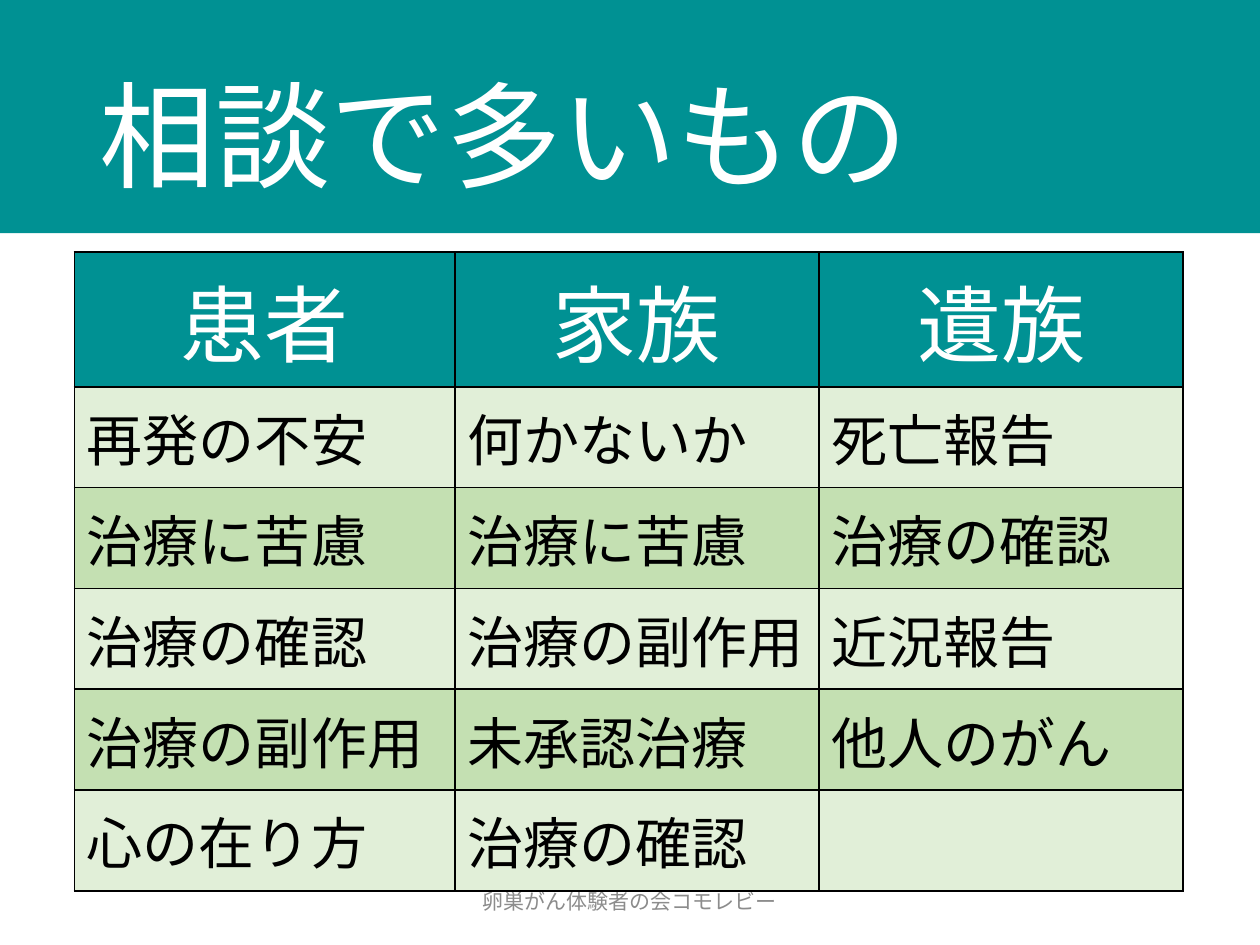
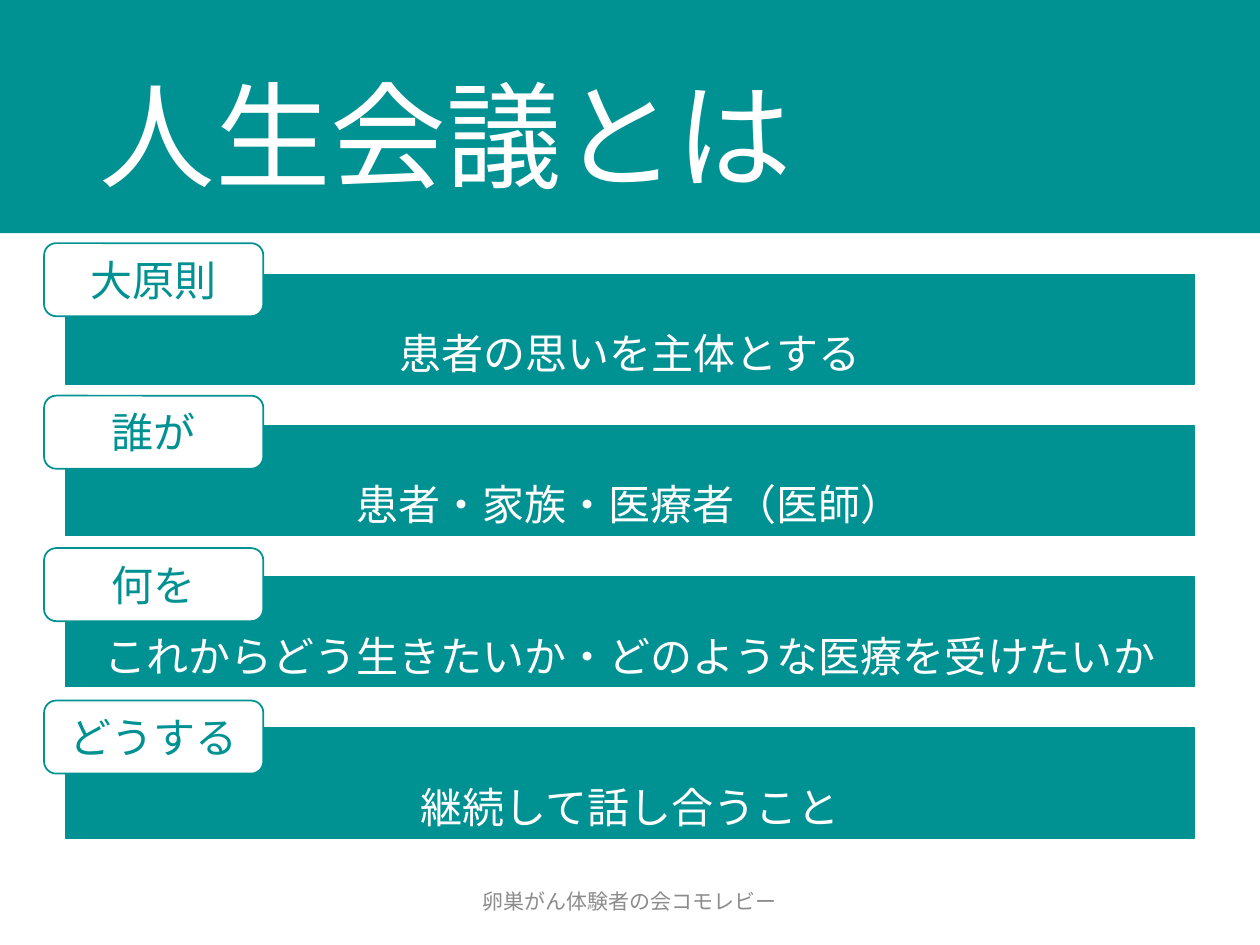
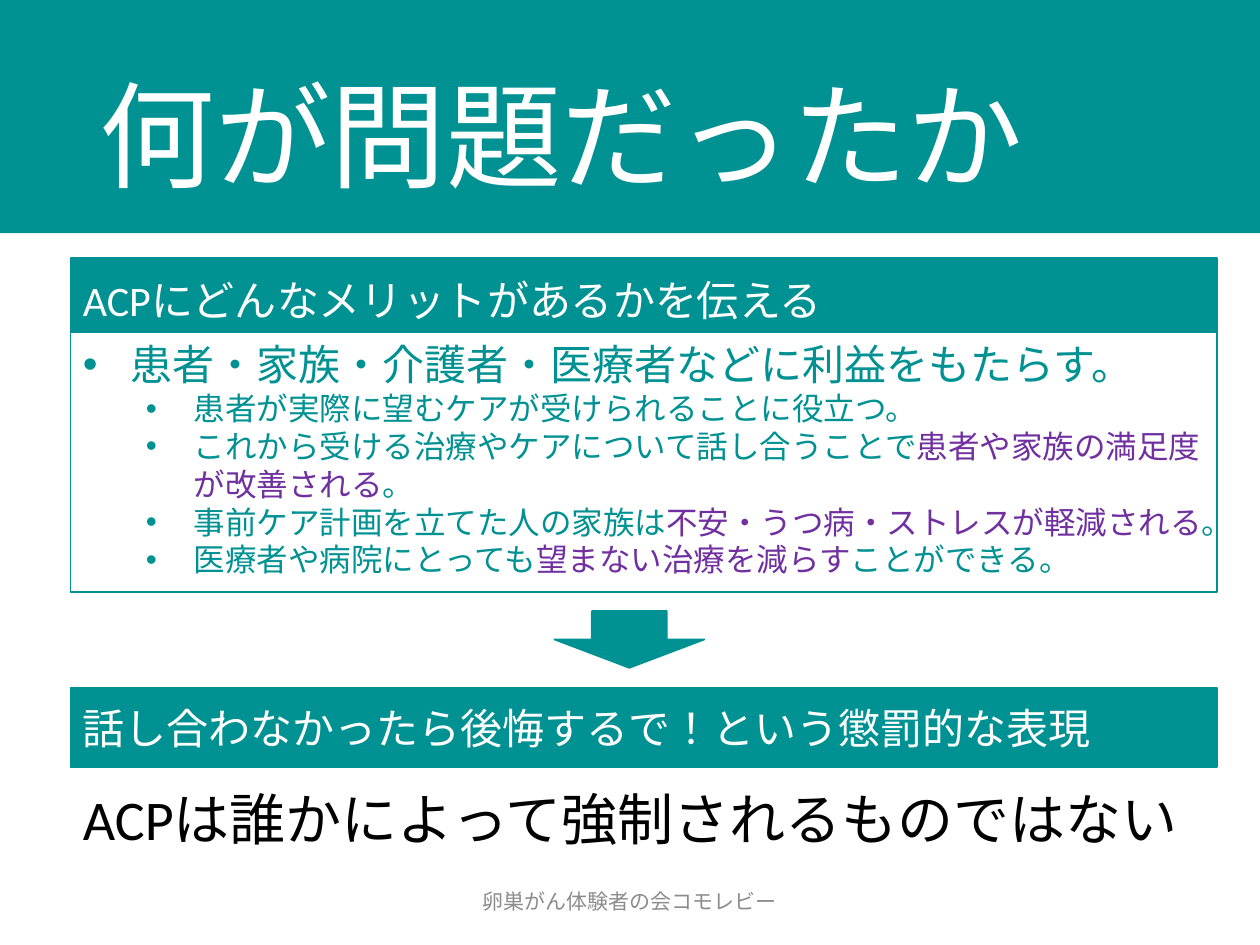
from lxml import etree
from pptx import Presentation
from pptx.dml.color import RGBColor
from pptx.enum.lang import MSO_LANGUAGE_ID
from pptx.enum.shapes import MSO_SHAPE
from pptx.enum.text import MSO_ANCHOR, MSO_AUTO_SIZE, PP_ALIGN
from pptx.oxml.ns import qn
from pptx.util import Inches, Pt

RECT, ROUNDED = MSO_SHAPE.RECTANGLE, MSO_SHAPE.ROUNDED_RECTANGLE
DOWN_ARROW = MSO_SHAPE.DOWN_ARROW
TOP, MIDDLE, BOTTOM = MSO_ANCHOR.TOP, MSO_ANCHOR.MIDDLE, MSO_ANCHOR.BOTTOM
LEFT, CENTER = PP_ALIGN.LEFT, PP_ALIGN.CENTER
JAPANESE = MSO_LANGUAGE_ID.JAPANESE

TEAL = RGBColor(0x00, 0x91, 0x93)
WHITE = RGBColor(0xFF, 0xFF, 0xFF)
BLACK = RGBColor(0x00, 0x00, 0x00)
GRAY = RGBColor(0x8C, 0x8C, 0x8C)
PURPLE = RGBColor(0x70, 0x30, 0xA0)
PALE_GREEN = RGBColor(0xE1, 0xEF, 0xD8)
GREEN = RGBColor(0xC4, 0xE0, 0xB2)

FONT = "Calibri"
FOOTER = "卵巣がん体験者の会コモレビー"

TOPICS = [
    ("患者", "家族", "遺族"),
    ("再発の不安", "何かないか", "死亡報告"),
    ("治療に苦慮", "治療に苦慮", "治療の確認"),
    ("治療の確認", "治療の副作用", "近況報告"),
    ("治療の副作用", "未承認治療", "他人のがん"),
    ("心の在り方", "治療の確認", ""),
]
PRINCIPLES = [
    ("大原則", "患者の思いを主体とする"),
    ("誰が", "患者・家族・医療者（医師）"),
    ("何を", "これからどう生きたいか・どのような医療を受けたいか"),
    ("どうする", "継続して話し合うこと"),
]
# Each merit: text before, highlighted text, text after
MERIT_HEAD = "患者・家族・介護者・医療者などに利益をもたらす。"
MERITS = [
    ("患者が実際に望むケアが受けられることに役立つ。", "", ""),
    ("これから受ける治療やケアについて話し合うことで",
     "患者や家族の満足度\nが改善される", "。"),
    ("事前ケア計画を立てた人の家族は", "不安・うつ病・ストレスが軽減される", "。"),
    ("医療者や病院にとっても", "望まない治療を減らす", "ことができる。"),
]


def add_text(p, text, size=24, color=WHITE, align=None, asian_font=FONT):
    """Append text to a paragraph; a newline becomes a line break."""
    if align is not None:
        p.alignment = align
    for i, line in enumerate(text.split("\n")):
        if i:
            p.add_line_break()
        r = p.add_run()
        r.text = line
        r.font.name, r.font.size, r.font.bold = FONT, Pt(size), False
        r.font.color.rgb = color
        r.font.language_id = JAPANESE
        if asian_font:
            etree.SubElement(r.font._element, qn("a:ea"), typeface=asian_font)


def set_bullet(p, left, hang, level=0):
    p.level = level
    pPr = p._p.get_or_add_pPr()
    pPr.set("marL", str(Inches(left)))
    pPr.set("indent", str(-Inches(hang)))
    etree.SubElement(pPr, qn("a:buFont"), typeface="Arial")
    etree.SubElement(pPr, qn("a:buChar"), char="•")


def add_box(s, kind, box, text="", fill=TEAL, color=WHITE, align=CENTER, anchor=MIDDLE):
    sp = s.shapes.add_shape(kind, *map(Inches, box))
    sp.shadow.inherit = False
    sp.fill.solid()
    sp.fill.fore_color.rgb = fill
    sp.line.color.rgb = TEAL
    sp.line.width = Pt(1)
    tf = sp.text_frame
    tf.word_wrap = True
    tf.vertical_anchor = anchor
    if text:
        add_text(tf.paragraphs[0], text, color=color, align=align)
    return sp


def add_label(s, box, text, size, color, align, wrap=True):
    tf = s.shapes.add_textbox(*map(Inches, box)).text_frame
    tf.word_wrap = wrap
    tf.vertical_anchor = MIDDLE
    add_text(tf.paragraphs[0], text, size, color, align)


def add_slide(prs, title):
    """Title-only slide with the shared band, title and footer."""
    s = prs.slides.add_slide(prs.slide_layouts[5])
    band = add_box(s, RECT, (0, 0, 10, 1.85))
    band.line.fill.background()
    s.shapes._spTree.insert(2, band._element)  # behind the title
    sp = s.shapes.title
    sp.left, sp.top, sp.width, sp.height = map(Inches, (0.69, 0.4, 8.62, 1.45))
    tf = sp.text_frame
    tf.auto_size = MSO_AUTO_SIZE.NONE
    tf.vertical_anchor = MIDDLE
    p = tf.paragraphs[0]
    p.line_spacing = 0.9
    add_text(p, title, 66, align=LEFT)
    add_label(s, (3.31, 6.95, 3.38, 0.4), FOOTER, 12, GRAY, CENTER)
    return s


def set_borders(cell):
    tcPr = cell._tc.get_or_add_tcPr()
    for i, side in enumerate(("lnL", "lnR", "lnT", "lnB")):
        ln = etree.Element(qn(f"a:{side}"), w=str(Pt(1)))
        fill = etree.SubElement(ln, qn("a:solidFill"))
        etree.SubElement(fill, qn("a:srgbClr"), val=str(BLACK))
        tcPr.insert(i, ln)


def add_topic_table(s, left, top, widths, head_height, row_height):
    heights = [head_height] + [row_height] * (len(TOPICS) - 1)
    frame = s.shapes.add_table(len(TOPICS), len(widths), Inches(left), Inches(top),
                               Inches(sum(widths)), Inches(sum(heights)))
    table = frame.table
    for col, width in zip(table.columns, widths):
        col.width = Inches(width)
    for i, row in enumerate(TOPICS):
        table.rows[i].height = Inches(heights[i])
        fill = TEAL if i == 0 else (GREEN, PALE_GREEN)[i % 2]
        size, color, align = (48, WHITE, CENTER) if i == 0 else (32, BLACK, LEFT)
        for j, text in enumerate(row):
            cell = table.cell(i, j)
            cell.vertical_anchor = MIDDLE
            cell.fill.solid()
            cell.fill.fore_color.rgb = fill
            set_borders(cell)
            if text:
                add_text(cell.text_frame.paragraphs[0], text, size, color, align,
                         asian_font=None)


def add_principles(s, left, top, width):
    """Bars with a rounded tag over the upper left corner of each."""
    for i, (_, text) in enumerate(PRINCIPLES):
        add_box(s, RECT, (left + 0.17, top + 0.25 + 1.2 * i, width - 0.17, 0.87),
                text, anchor=BOTTOM)
    for i, (tag, _) in enumerate(PRINCIPLES):
        add_box(s, ROUNDED, (left, top + 1.21 * i, 1.74, 0.58), tag, WHITE, TEAL)


def add_merits(s, left, top, width):
    """Heading bar over a framed bullet list."""
    add_box(s, RECT, (left, top, width, 0.66), "ACPにどんなメリットがあるかを伝える", align=LEFT)
    tf = add_box(s, RECT, (left, top + 0.59, width, 2.06), fill=WHITE, anchor=TOP).text_frame
    p = tf.paragraphs[0]
    set_bullet(p, 0.38, 0.38)
    add_text(p, MERIT_HEAD, 24, TEAL, LEFT)
    for parts in MERITS:
        p = tf.add_paragraph()
        set_bullet(p, 0.88, 0.38, level=1)
        for text, color in zip(parts, (TEAL, PURPLE, TEAL)):
            if text:
                add_text(p, text, 18, color, LEFT)


def add_conclusion(s, left, top, width):
    """Arrow down to a bar, with the closing statement below."""
    add_box(s, DOWN_ARROW, (left + 3.84, top, 1.19, 0.45))
    add_box(s, RECT, (left, top + 0.61, width, 0.63),
            "話し合わなかったら後悔するで！という懲罰的な表現", align=LEFT)
    add_label(s, (left, top + 1.32, width - 0.09, 0.64),
              "ACPは誰かによって強制されるものではない", 32, BLACK, LEFT, wrap=False)


def main():
    prs = Presentation()
    prs.slide_width, prs.slide_height = Inches(10), Inches(7.5)

    s = add_slide(prs, "相談で多いもの")
    add_topic_table(s, 0.59, 2, (3.02, 2.89, 2.89), 1.07, 0.8)

    s = add_slide(prs, "人生会議とは")
    add_principles(s, 0.35, 1.93, 9.13)

    s = add_slide(prs, "何が問題だったか")
    add_merits(s, 0.56, 2.05, 9.1)
    add_conclusion(s, 0.56, 4.85, 9.1)

    prs.save("out.pptx")


if __name__ == "__main__":
    main()
